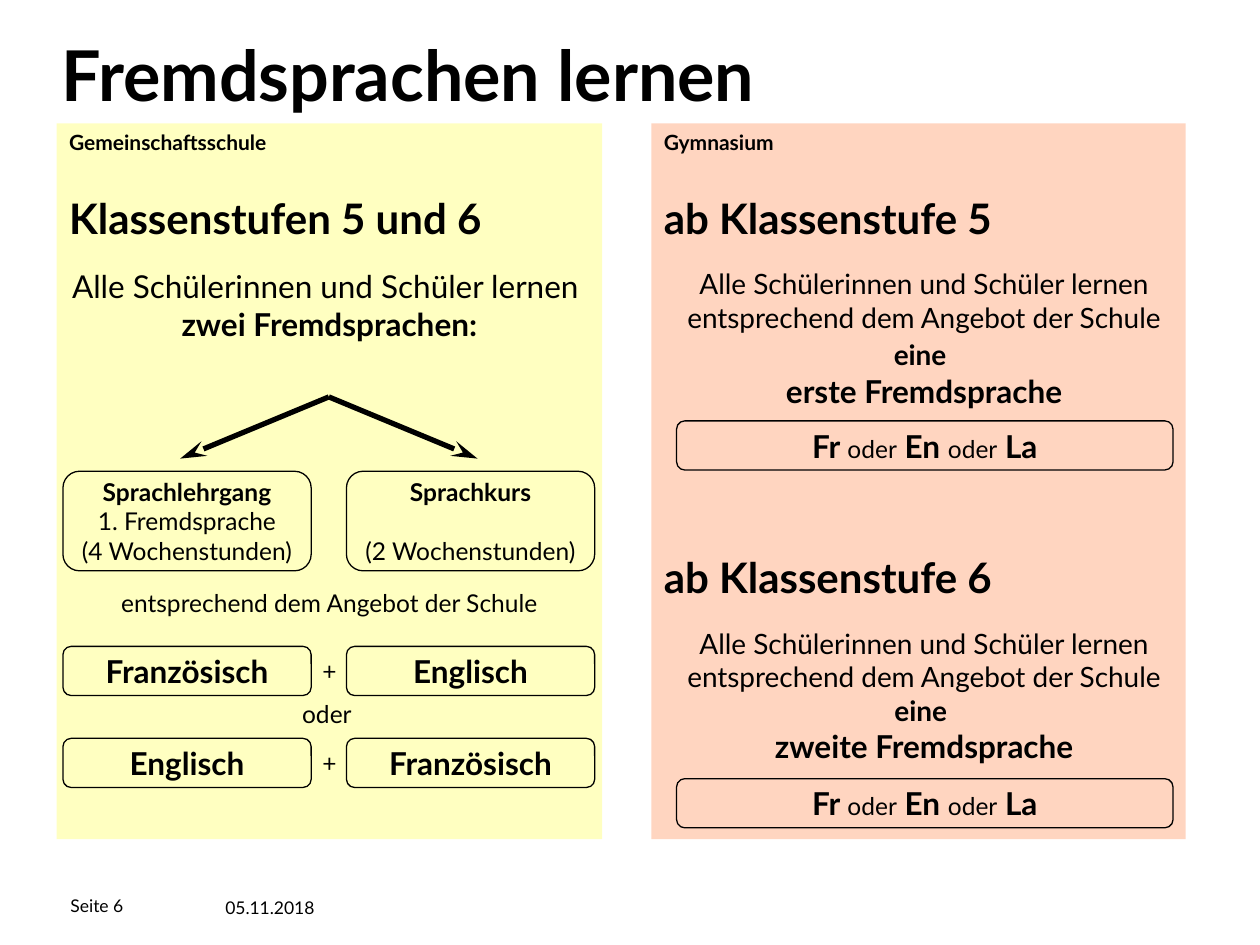
import copy
import dataclasses
import typing

import lxml.etree
import pptx
import pptx.dml.color
import pptx.enum.shapes
import pptx.enum.text
import pptx.oxml.ns
import pptx.util

Inches = pptx.util.Inches
Pt = pptx.util.Pt
ALIGN = pptx.enum.text.PP_ALIGN
ANCHOR = pptx.enum.text.MSO_ANCHOR
GROW = pptx.enum.text.MSO_AUTO_SIZE
SHAPE = pptx.enum.shapes.MSO_SHAPE

FONT = "Lato"
HUES = {"ink": "000000", "peach": "FFBA97", "lemon": "FFFF99"}
LEFT, RIGHT, TOP = 0.45, 5.17, 0.98
WIDE, TALL = 4.33, 5.68
COLS = (0.5, 2.75)
CELL, ROW = 1.97, 0.39


@dataclasses.dataclass
class Run:
    text: str
    size: float
    bold: bool = False


@dataclasses.dataclass
class Box:
    left: float
    top: float
    width: float
    height: float
    runs: list[Run]
    align: typing.Any = ALIGN.CENTER
    anchor: typing.Any = ANCHOR.TOP
    wrap: bool = True
    grow: bool = True
    inset: tuple[float, float] = (0.1, 0.05)
    tail: list[Run] = dataclasses.field(default_factory=list)
    gap: float = 0


def apply(item: typing.Any, values: dict[str, typing.Any]) -> None:
    for name, value in values.items():
        setattr(item, name, value)


def tint(name: str) -> pptx.dml.color.RGBColor:
    return pptx.dml.color.RGBColor.from_string(HUES[name])


def area(box: Box) -> tuple:
    return tuple(Inches(v) for v in (box.left, box.top, box.width, box.height))


def write_runs(para, runs: list[Run]) -> None:
    for run in runs:
        for index, line in enumerate(run.text.split("\n")):
            if index:
                para.add_line_break()
                para._p[-1].append(copy.deepcopy(part._r.rPr))
            if line:
                part = para.add_run()
                part.text = line
                apply(part.font, {"name": FONT, "size": Pt(run.size), "bold": run.bold})
                part.font.color.rgb = tint("ink")


def fill_text(frame, box: Box) -> None:
    side, edge = (Inches(v) for v in box.inset)
    apply(frame, {
        "margin_left": side, "margin_right": side,
        "margin_top": edge, "margin_bottom": edge,
        "auto_size": GROW.SHAPE_TO_FIT_TEXT if box.grow else GROW.NONE,
        "word_wrap": box.wrap, "vertical_anchor": box.anchor,
    })
    para = frame.paragraphs[0]
    para.alignment = box.align
    write_runs(para, box.runs)
    if box.tail:
        last = frame.add_paragraph()
        apply(last, {"alignment": box.align, "space_before": Pt(box.gap)})
        write_runs(last, box.tail)


def add_text(slide, box: Box) -> None:
    fill_text(slide.shapes.add_textbox(*area(box)).text_frame, box)


def add_frame(slide, left: float, top: float, width: float, height: float,
              runs: list[Run], tail: list[Run] = [], gap: float = 0) -> None:
    box = Box(left, top, width, height, runs, anchor=ANCHOR.MIDDLE,
              wrap=False, grow=False, inset=(0.04, 0.04), tail=tail, gap=gap)
    shape = slide.shapes.add_shape(SHAPE.ROUNDED_RECTANGLE, *area(box))
    shape.shadow.inherit = False
    shape.fill.background()
    shape.line.color.rgb = tint("ink")
    shape.line.width = Pt(0.75)
    fill_text(shape.text_frame, box)


def add_panel(slide, left: float, width: float, hue: str) -> None:
    shape = slide.shapes.add_shape(
        SHAPE.RECTANGLE, Inches(left), Inches(TOP), Inches(width), Inches(TALL))
    shape.shadow.inherit = False
    shape.fill.solid()
    shape.fill.fore_color.rgb = tint(hue)
    shape.line.fill.background()
    tone = shape._element.spPr.find(".//" + pptx.oxml.ns.qn("a:srgbClr"))
    lxml.etree.SubElement(tone, pptx.oxml.ns.qn("a:alpha"), val="60000")


def add_arrow(slide, start: tuple[float, float], end: tuple[float, float]) -> None:
    kind = pptx.enum.shapes.MSO_CONNECTOR.STRAIGHT
    arrow = slide.shapes.add_connector(kind, *(Inches(v) for v in start + end))
    arrow.line.color.rgb = tint("ink")
    arrow.line.width = Pt(3)
    props = arrow._element.spPr
    lxml.etree.SubElement(props.find(pptx.oxml.ns.qn("a:ln")), pptx.oxml.ns.qn("a:tailEnd"),
                          type="stealth", w="med", len="lg")
    lxml.etree.SubElement(props, pptx.oxml.ns.qn("a:effectLst"))


def add_label(slide, left: float, top: float, width: float, height: float,
              text: str, size: float, anchor=ANCHOR.MIDDLE) -> None:
    add_text(slide, Box(left, top, width, height, [Run(text, size, True)],
                        ALIGN.LEFT, anchor, wrap=False))


def add_joint(slide, left: float, top: float, width: float, text: str) -> None:
    add_text(slide, Box(left, top, width, 0.24, [Run(text, 14)], inset=(0, 0)))


def main() -> None:
    deck = pptx.Presentation()
    apply(deck, {"slide_width": Inches(10), "slide_height": Inches(7.5)})
    slide = deck.slides.add_slide(deck.slide_layouts[6])

    add_panel(slide, RIGHT, 4.24, "peach")
    add_panel(slide, LEFT, WIDE, "lemon")
    add_label(slide, 0.39, 0.2, 6.12, 0.78, "Fremdsprachen lernen", 40, ANCHOR.TOP)
    add_label(slide, LEFT, TOP, 1.9, 0.3, "Gemeinschaftsschule", 12, ANCHOR.TOP)
    add_label(slide, RIGHT, TOP, 1.15, 0.3, "Gymnasium", 12, ANCHOR.TOP)
    add_label(slide, LEFT, 1.47, 3.73, 0.51, "Klassenstufen 5 und 6", 24)

    add_text(slide, Box(LEFT, 2.07, WIDE, 1, [
        Run("Alle Schülerinnen und Schüler lernen \n", 18),
        Run("zwei Fremdsprachen:", 18, True)]))
    for tip in (1.43, 3.79):
        add_arrow(slide, (2.61, 3.15), (tip, 3.64))
    add_frame(slide, COLS[0], 3.74, CELL, 0.79, [
        Run("Sprachlehrgang\n", 14, True),
        Run("1. Fremdsprache\n(4 Wochenstunden)", 14)])
    add_frame(slide, COLS[1], 3.74, CELL, 0.79, [Run("Sprachkurs", 14, True)],
              [Run("(2 Wochenstunden)", 14)], 16.8)
    add_text(slide, Box(LEFT, 4.62, WIDE, 0.33,
                        [Run("entsprechend dem Angebot der Schule", 14)]))

    pair = ("Französisch", "Englisch")
    for top, names in ((5.13, pair), (5.86, pair[::-1])):
        for left, name in zip(COLS, names):
            add_frame(slide, left, top, CELL, ROW, [Run(name, 18, True)])
        add_joint(slide, 2.47, top + 0.08, 0.29, "+")
    add_joint(slide, 2.36, 5.55, 0.47, "oder")

    intro = Run("Alle Schülerinnen und Schüler lernen\n"
                "entsprechend dem Angebot der Schule ", 16)
    first = [Run("eine", 16, True), Run(" \n", 18), Run("erste Fremdsprache", 18, True)]
    second = [Run("eine \n", 16, True), Run("zweite Fremdsprache", 18, True)]
    choice = [Run("Fr ", 18, True), Run("oder", 14), Run(" En ", 18, True),
              Run("oder", 14), Run(" La", 18, True)]
    for grade, top, height, goal, base in (
            (5, 1.47, 1.24, first, 3.34), (6, 4.32, 1.2, second, 6.18)):
        add_label(slide, RIGHT, top, 3, 0.51, f"ab Klassenstufe {grade}", 24)
        add_text(slide, Box(RIGHT, top + 0.6, WIDE, height, [intro] + goal))
        add_frame(slide, 5.37, base, 3.94, ROW, choice)

    add_text(slide, Box(0.56, 7.07, 1.26, 0.24, [Run("Seite 6", 10)], ALIGN.LEFT,
                        ANCHOR.MIDDLE, wrap=False, grow=False, inset=(0, 0)))
    add_text(slide, Box(1.69, 7.07, 1.26, 0.24, [Run("05.11.2018", 10)],
                        ALIGN.LEFT, grow=False))
    deck.save("out.pptx")


if __name__ == "__main__":
    main()
